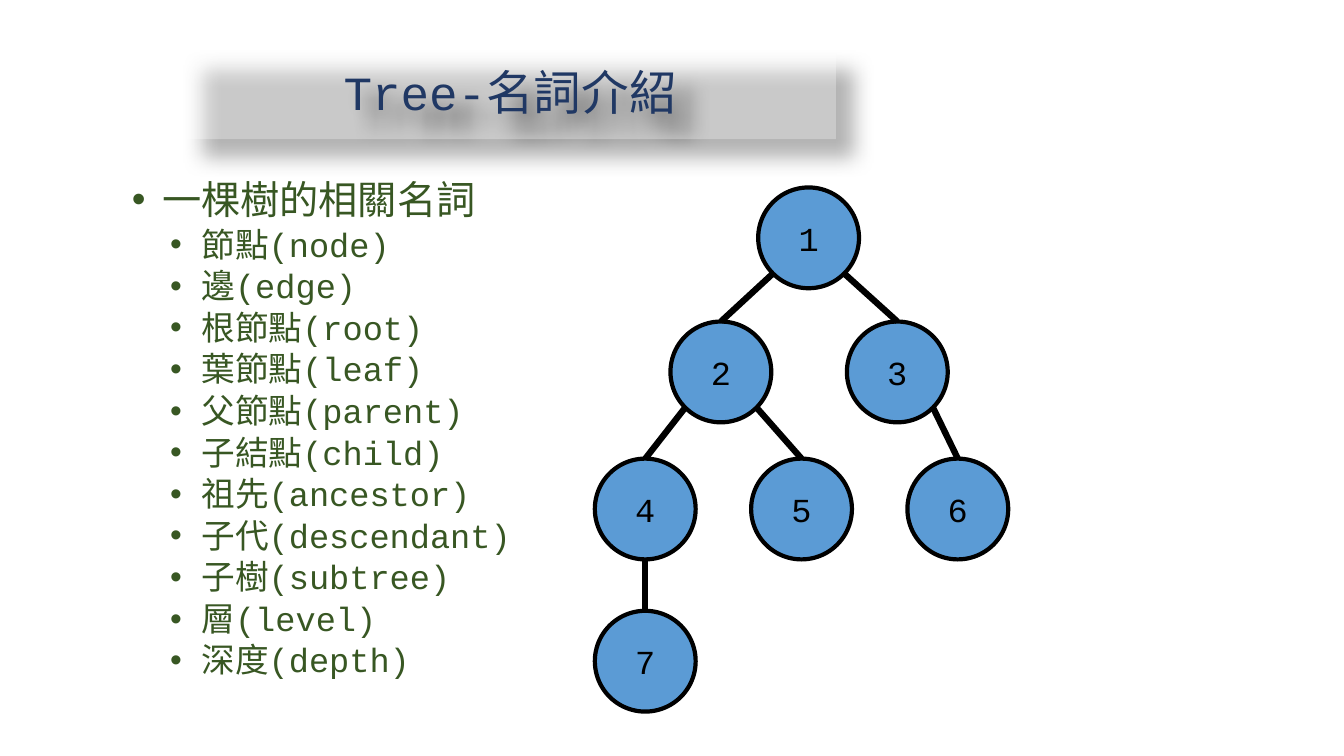
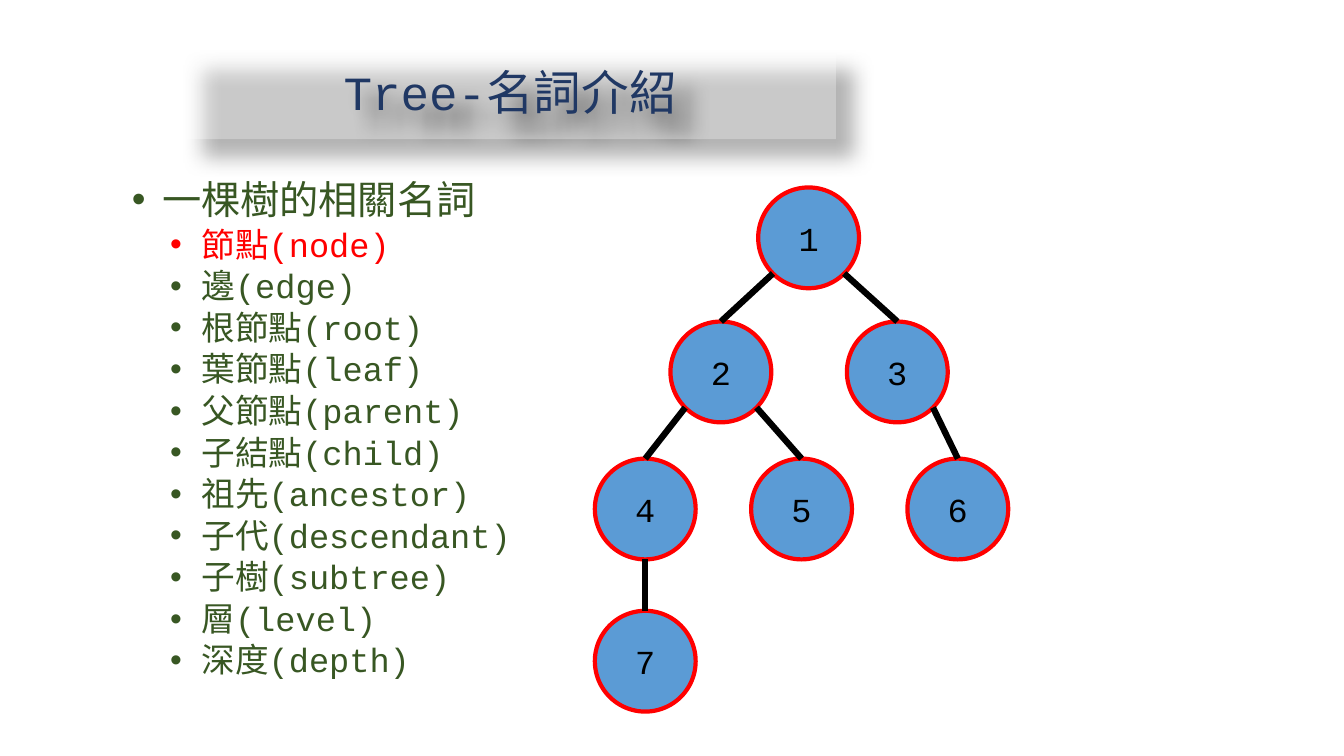
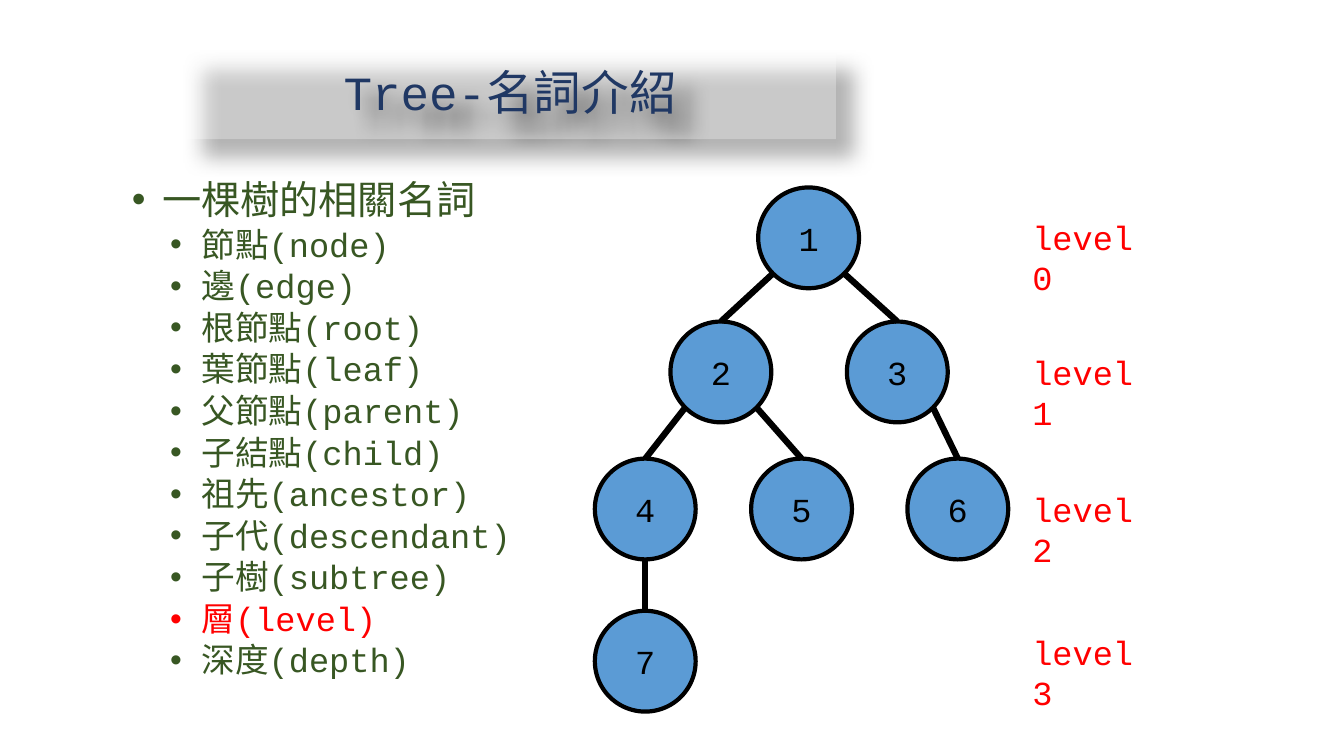
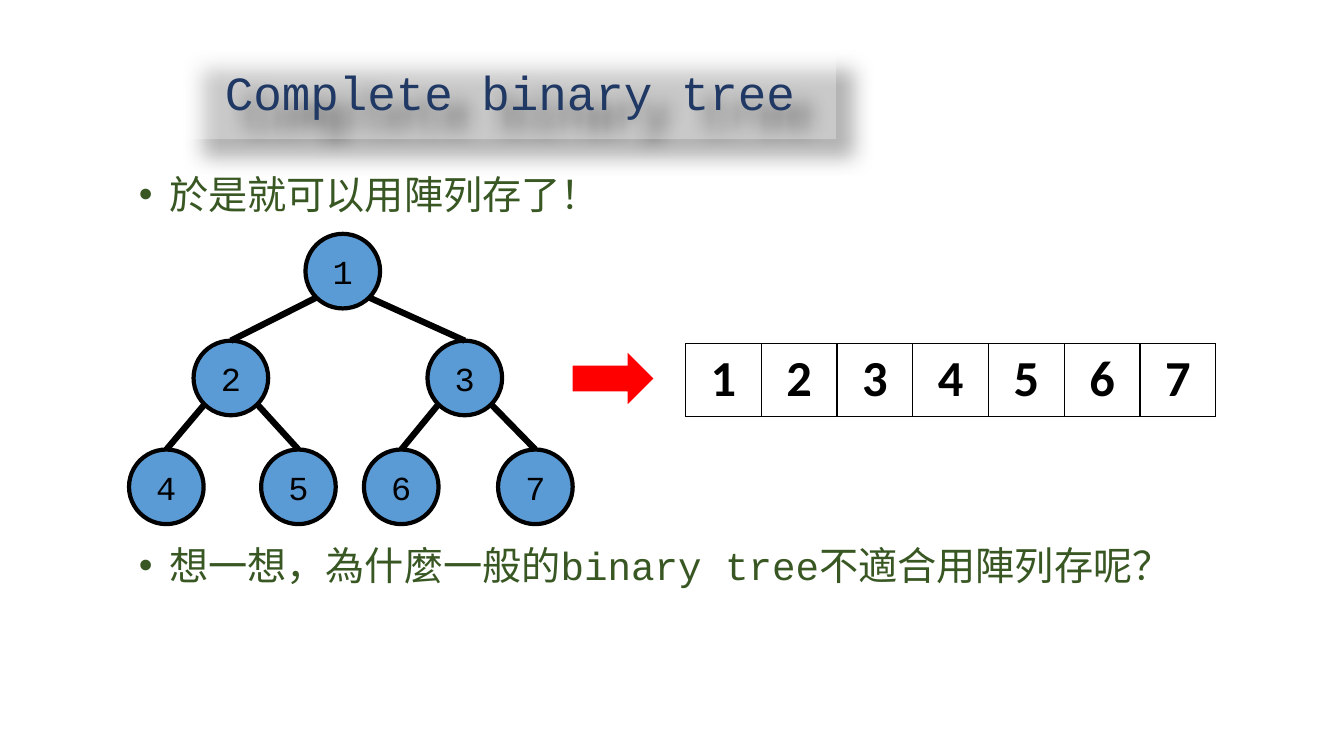
"""Build four slides on tree terms and on storing a complete binary tree."""
from dataclasses import dataclass

from lxml import etree
from pptx import Presentation
from pptx.dml.color import RGBColor
from pptx.enum.shapes import MSO_CONNECTOR as Link, MSO_SHAPE as Preset
from pptx.enum.text import MSO_ANCHOR as Anchor, MSO_AUTO_SIZE as AutoSize, PP_ALIGN as Align
from pptx.oxml import parse_xml
from pptx.oxml.ns import nsdecls, qn
from pptx.util import Inches, Pt


@dataclass(frozen=True)
class Theme:
    """Colours, fonts and type sizes shared by the slides."""
    navy: str = "203864"
    green: str = "385723"
    blue: str = "5B9BD5"
    red: str = "FF0000"
    black: str = "000000"
    white: str = "FFFFFF"
    code_font: str = "Courier New"
    table_font: str = "Calibri"
    title_size: int = 34
    body_size: int = 28
    detail_size: int = 24
    table_size: int = 36
    line_spacing: float = 0.9
    ring_width: float = 3
    edge_width: float = 4.5


@dataclass(frozen=True)
class Tree:
    """Circle size, row centres, and each node as (centre x, row, parent)."""
    diameter: float
    rows: tuple
    nodes: dict


THEME = Theme()
TERMS = ("節點(node)", "邊(edge)", "根節點(root)", "葉節點(leaf)", "父節點(parent)",
         "子結點(child)", "祖先(ancestor)", "子代(descendant)", "子樹(subtree)",
         "層(level)", "深度(depth)")
TERMS_TREE = Tree(1, (2.36, 3.69, 5.05, 6.56), {
    1: (8.02, 0, None), 2: (7.15, 1, 1), 3: (8.9, 1, 1), 4: (6.4, 2, 2),
    5: (7.95, 2, 2), 6: (9.5, 2, 3), 7: (6.4, 3, 4)})
COMPLETE_TREE = Tree(0.74, (2.69, 3.75, 4.83), {
    1: (3.4, 0, None), 2: (2.29, 1, 1), 3: (4.61, 1, 1), 4: (1.65, 2, 2),
    5: (2.96, 2, 2), 6: (3.98, 2, 3), 7: (5.31, 2, 3)})
LEVEL_TOPS = (2.1, 3.44, 4.8, 6.22)


def color(value):
    """Turn a hex string into a colour."""
    return RGBColor.from_string(value)


def inches(*values):
    """Turn numbers into lengths."""
    return [Inches(value) for value in values]


def write(para, text, size, tint, font=THEME.code_font, bold=False):
    """Add one formatted run to a paragraph."""
    span = para.add_run()
    span.text = text
    span.font.size = Pt(size)
    span.font.name = font
    span.font.bold = bold
    span.font.color.rgb = color(tint)


def add_page(deck, title):
    """Add a title-only slide with its shadowed title band."""
    page = deck.slides.add_slide(deck.slide_layouts[5])
    band = page.shapes.title
    band.left, band.top, band.width, band.height = inches(1.83, 0.51, 6.46, 0.87)
    band.fill.solid()
    band.fill.fore_color.rgb = color(THEME.white)
    tint = band.fill._xPr.find(qn("a:solidFill"))[0]
    etree.SubElement(tint, qn("a:alpha"), val="30000")
    band._element.spPr.append(parse_xml(
        f'<a:effectLst {nsdecls("a")}><a:outerShdw blurRad="{Pt(15)}" dist="{Pt(18)}" '
        f'dir="2700000" algn="tl" rotWithShape="0"><a:srgbClr val="{THEME.black}">'
        '<a:alpha val="30000"/></a:srgbClr></a:outerShdw></a:effectLst>'))
    frame = band.text_frame
    frame.auto_size = AutoSize.NONE
    frame.vertical_anchor = Anchor.MIDDLE
    para = frame.paragraphs[0]
    para.alignment = Align.CENTER
    para.line_spacing = THEME.line_spacing
    write(para, title, THEME.title_size, THEME.navy)
    return page


def add_text_box(page, *place):
    """Add a wrapping text box and return its frame."""
    frame = page.shapes.add_textbox(*inches(*place)).text_frame
    frame.word_wrap = True
    return frame


def add_bullet(frame, text, level=0, tint=THEME.green, before=None):
    """Write a bullet in the frame's first free paragraph."""
    first = frame.paragraphs[0]
    para = frame.add_paragraph() if first.runs else first
    indent, hang = ((0.3, 0.3), (0.69, 0.31))[level]
    props = para._p.get_or_add_pPr()
    props.set("marL", str(Inches(indent)))
    props.set("indent", str(-Inches(hang)))
    etree.SubElement(props, qn("a:buFont"), typeface="Arial")
    etree.SubElement(props, qn("a:buChar"), char="•")
    para.level = level
    para.line_spacing = THEME.line_spacing
    if before:
        para.space_before = Pt(before)
    write(para, text, (THEME.body_size, THEME.detail_size)[level], tint)


def add_terms(page, marked=None):
    """List the tree terms, with the marked one in red."""
    frame = add_text_box(page, 1.21, 1.74, 11.5, 5.32)
    add_bullet(frame, "一棵樹的相關名詞")
    for term in TERMS:
        add_bullet(frame, term, 1, THEME.red if term == marked else THEME.green, 3.8)


def add_node(page, label, center, diameter, ring):
    """Draw one numbered tree node."""
    corner = [value - diameter / 2 for value in center]
    node = page.shapes.add_shape(Preset.OVAL, *inches(*corner, diameter, diameter))
    node.shadow.inherit = False
    node.fill.solid()
    node.fill.fore_color.rgb = color(THEME.blue)
    node.line.color.rgb = color(ring)
    node.line.width = Pt(THEME.ring_width)
    node.text_frame.vertical_anchor = Anchor.MIDDLE
    para = node.text_frame.paragraphs[0]
    para.alignment = Align.CENTER
    write(para, str(label), THEME.detail_size, THEME.black)


def add_edge(page, parent, child, diameter):
    """Join a parent's lower rim to the top of its child."""
    radius = diameter / 2
    side = (child[0] > parent[0]) - (child[0] < parent[0])
    diagonal = radius * 0.5 ** 0.5
    start = (parent[0] + side * diagonal, parent[1] + (diagonal if side else radius))
    edge = page.shapes.add_connector(
        Link.STRAIGHT, *inches(*start, child[0], child[1] - radius))
    edge.line.color.rgb = color(THEME.black)
    edge.line.width = Pt(THEME.edge_width)
    etree.SubElement(edge._element.spPr, qn("a:effectLst"))


def add_tree(page, tree, ring=THEME.black):
    """Draw the nodes of a tree, then its edges."""
    centers = {label: (x, tree.rows[row]) for label, (x, row, _) in tree.nodes.items()}
    for label, center in centers.items():
        add_node(page, label, center, tree.diameter, ring)
    for label, (_, _, parent) in tree.nodes.items():
        if parent:
            add_edge(page, centers[parent], centers[label], tree.diameter)


def add_levels(page):
    """Label the levels of the tree."""
    for level, top in enumerate(LEVEL_TOPS):
        frame = add_text_box(page, 10.14, top, 1.5, 0.5)
        write(frame.paragraphs[0], f"level {level}", THEME.detail_size, THEME.red)


def add_arrow(page, *place):
    """Draw the red arrow from tree to array."""
    arrow = page.shapes.add_shape(Preset.RIGHT_ARROW, *inches(*place))
    arrow.shadow.inherit = False
    arrow.fill.solid()
    arrow.fill.fore_color.rgb = color(THEME.red)
    arrow.line.fill.background()


def add_borders(cell):
    """Give a cell thin black borders on all sides."""
    props = cell._tc.get_or_add_tcPr()
    for index, side in enumerate(("lnL", "lnR", "lnT", "lnB")):
        props.insert(index, parse_xml(
            f'<a:{side} {nsdecls("a")} w="{Pt(1)}"><a:solidFill>'
            f'<a:srgbClr val="{THEME.black}"/></a:solidFill></a:{side}>'))


def add_array(page, values, *place):
    """Show the values as a one-row table."""
    table = page.shapes.add_table(1, len(values), *inches(*place)).table
    table.first_row = table.horz_banding = False
    for cell, value in zip(table.rows[0].cells, values):
        cell.fill.solid()
        cell.fill.fore_color.rgb = color(THEME.white)
        add_borders(cell)
        para = cell.text_frame.paragraphs[0]
        para.alignment = Align.CENTER
        write(para, str(value), THEME.table_size, THEME.black, THEME.table_font, True)


def add_terms_page(deck, marked=None, ring=THEME.black):
    """Add a page with the term list beside its tree."""
    page = add_page(deck, "Tree-名詞介紹")
    add_terms(page, marked)
    add_tree(page, TERMS_TREE, ring)
    return page


def add_array_page(deck):
    """Add the page that turns a complete binary tree into an array."""
    page = add_page(deck, "Complete binary tree")
    frame = add_text_box(page, 1.28, 1.69, 11.5, 5.06)
    add_bullet(frame, "於是就可以用陣列存了！")
    add_bullet(frame, "想一想，為什麼一般的binary tree不適合用陣列存呢？", before=235)
    add_array(page, list(COMPLETE_TREE.nodes), 6.8, 3.41, 5.26, 0.72)
    add_tree(page, COMPLETE_TREE)
    add_arrow(page, 5.68, 3.5, 0.8, 0.51)


def main():
    """Build and save the deck."""
    deck = Presentation()
    deck.slide_width, deck.slide_height = inches(13.33, 7.5)
    add_terms_page(deck)
    add_terms_page(deck, "節點(node)", THEME.red)
    add_levels(add_terms_page(deck, "層(level)"))
    add_array_page(deck)
    deck.save("out.pptx")


if __name__ == "__main__":
    main()
